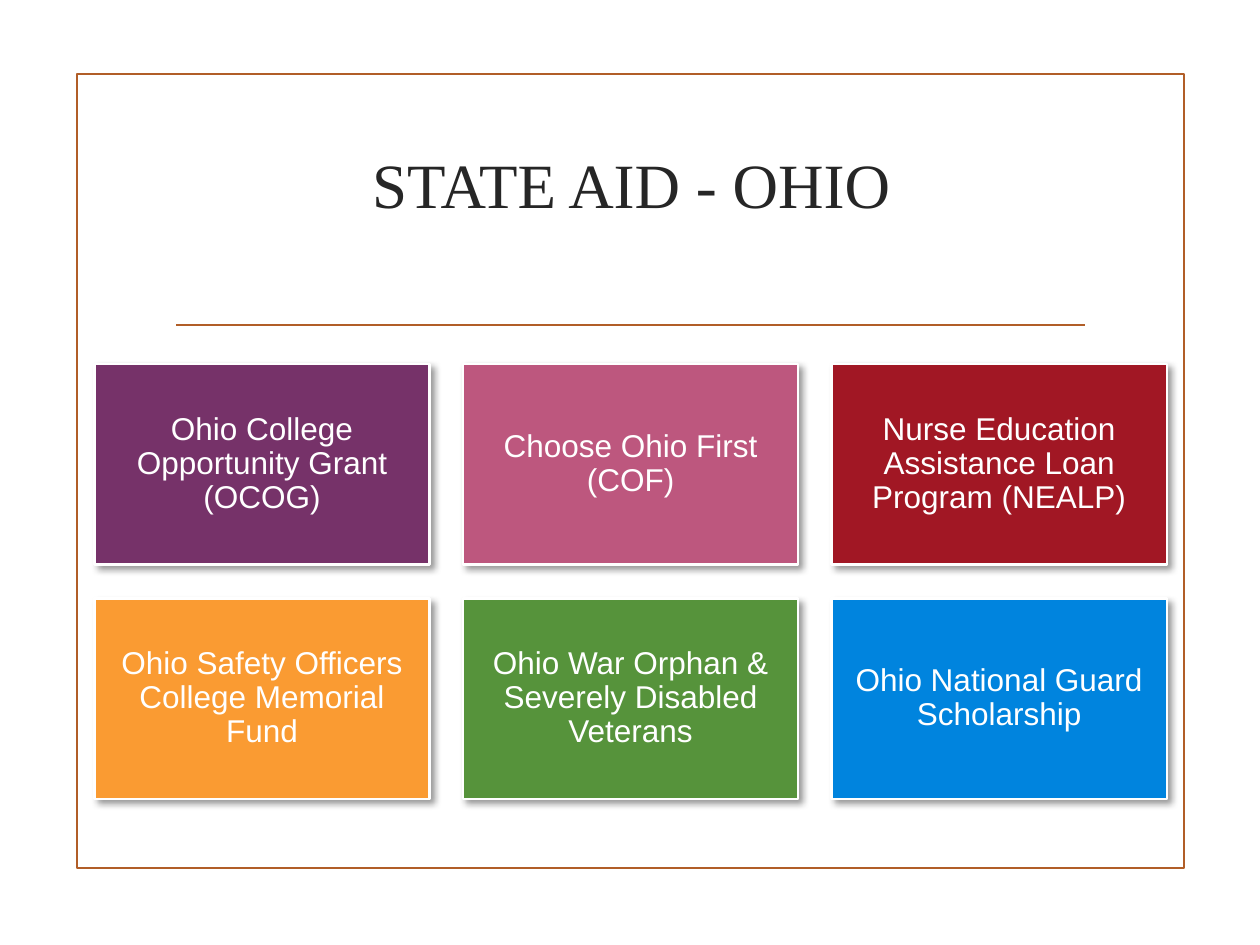
from dataclasses import dataclass

from lxml import etree
from pptx import Presentation
from pptx.dml import color
from pptx.enum import shapes, text
from pptx.oxml import ns
from pptx.util import Inches, Pt


@dataclass(frozen=True)
class Theme:
    """Colours, fonts and type sizes of the slide."""
    accent: str = "B15E28"
    ink: str = "262626"
    white: str = "FFFFFF"
    shadow: str = "000000"
    title_font: str = "Times New Roman"
    body_font: str = "Arial"
    title_size: int = 36
    body_size: int = 18
    line_width: float = 1.25


THEME = Theme()
PROGRAMS = [
    ("Ohio College Opportunity Grant (OCOG)", "763269"),
    ("Choose Ohio First (COF)", "BD577E"),
    ("Nurse Education Assistance Loan Program (NEALP)", "A11724"),
    ("Ohio Safety Officers College Memorial Fund", "FA9B32"),
    ("Ohio War Orphan & Severely Disabled Veterans", "56933B"),
    ("Ohio National Guard Scholarship", "0084DE"),
]
COLUMNS = 3
CARD_LEFT, CARD_TOP = 0.75, 2.89
CARD_WIDTH, CARD_HEIGHT = 2.66, 1.59
COLUMN_STEP, ROW_STEP = 2.925, 1.86


def rgb(code):
    """Return the colour for a hexadecimal code."""
    return color.RGBColor.from_string(code)


def style_line(line, code):
    """Give a line its colour and the common width."""
    line.color.rgb = rgb(code)
    line.width = Pt(THEME.line_width)


def write_text(box, words, *, font, size, ink, spacing=None, inset=None):
    """Write one centred paragraph in the middle of a box."""
    frame = box.text_frame
    frame.word_wrap = True
    frame.vertical_anchor = text.MSO_ANCHOR.MIDDLE
    if inset is not None:
        frame.margin_left = frame.margin_right = Inches(inset)
        frame.margin_top = frame.margin_bottom = Inches(inset)
    para = frame.paragraphs[0]
    para.alignment = text.PP_ALIGN.CENTER
    para.line_spacing = spacing
    span = para.add_run()
    span.text = words
    span.font.name = font
    span.font.size = Pt(size)
    span.font.color.rgb = rgb(ink)


def add_rectangle(page, left, top, width, height, *, line, fill=None):
    """Add an outlined rectangle, filled if a colour is given."""
    box = page.shapes.add_shape(
        shapes.MSO_SHAPE.RECTANGLE,
        Inches(left), Inches(top), Inches(width), Inches(height))
    box.shadow.inherit = False
    style_line(box.line, line)
    if fill:
        box.fill.solid()
        box.fill.fore_color.rgb = rgb(fill)
    else:
        box.fill.background()
    return box


def add_shadow(box):
    """Cast a soft shadow down and to the right of a box."""
    effects = box._element.spPr.find(ns.qn("a:effectLst"))
    shadow = etree.SubElement(
        effects, ns.qn("a:outerShdw"), blurRad=str(Pt(4)), dist=str(Pt(3)),
        dir=str(45 * 60000), algn="tl", rotWithShape="0")
    tint = etree.SubElement(shadow, ns.qn("a:srgbClr"), val=THEME.shadow)
    etree.SubElement(tint, ns.qn("a:alpha"), val="40000")


def add_rule(page, left, right, top):
    """Add the horizontal rule below the title."""
    rule = page.shapes.add_connector(
        shapes.MSO_CONNECTOR.STRAIGHT,
        Inches(left), Inches(top), Inches(right), Inches(top))
    style_line(rule.line, THEME.accent)
    etree.SubElement(rule._element.spPr, ns.qn("a:effectLst"))


def add_title(page, words):
    """Add the slide title."""
    box = page.shapes.add_textbox(
        Inches(1.29), Inches(1.08), Inches(7.44), Inches(0.75))
    write_text(box, words, font=THEME.title_font, size=THEME.title_size,
               ink=THEME.ink)


def add_cards(page):
    """Lay out the aid programs as a grid of cards."""
    for index, (name, fill) in enumerate(PROGRAMS):
        row, column = divmod(index, COLUMNS)
        card = add_rectangle(
            page, CARD_LEFT + column * COLUMN_STEP, CARD_TOP + row * ROW_STEP,
            CARD_WIDTH, CARD_HEIGHT, line=THEME.white, fill=fill)
        add_shadow(card)
        write_text(card, name, font=THEME.body_font, size=THEME.body_size,
                   ink=THEME.white, spacing=0.9, inset=0.07)


def main():
    """Build and save the slide."""
    deck = Presentation()
    deck.slide_width, deck.slide_height = Inches(10), Inches(7.5)
    page = deck.slides.add_slide(deck.slide_layouts[6])
    add_rectangle(page, 0.61, 0.59, 8.79, 6.3, line=THEME.accent)
    add_rule(page, 1.4, 8.61, 2.58)
    add_title(page, "STATE AID - OHIO")
    add_cards(page)
    deck.save("out.pptx")


if __name__ == "__main__":
    main()
